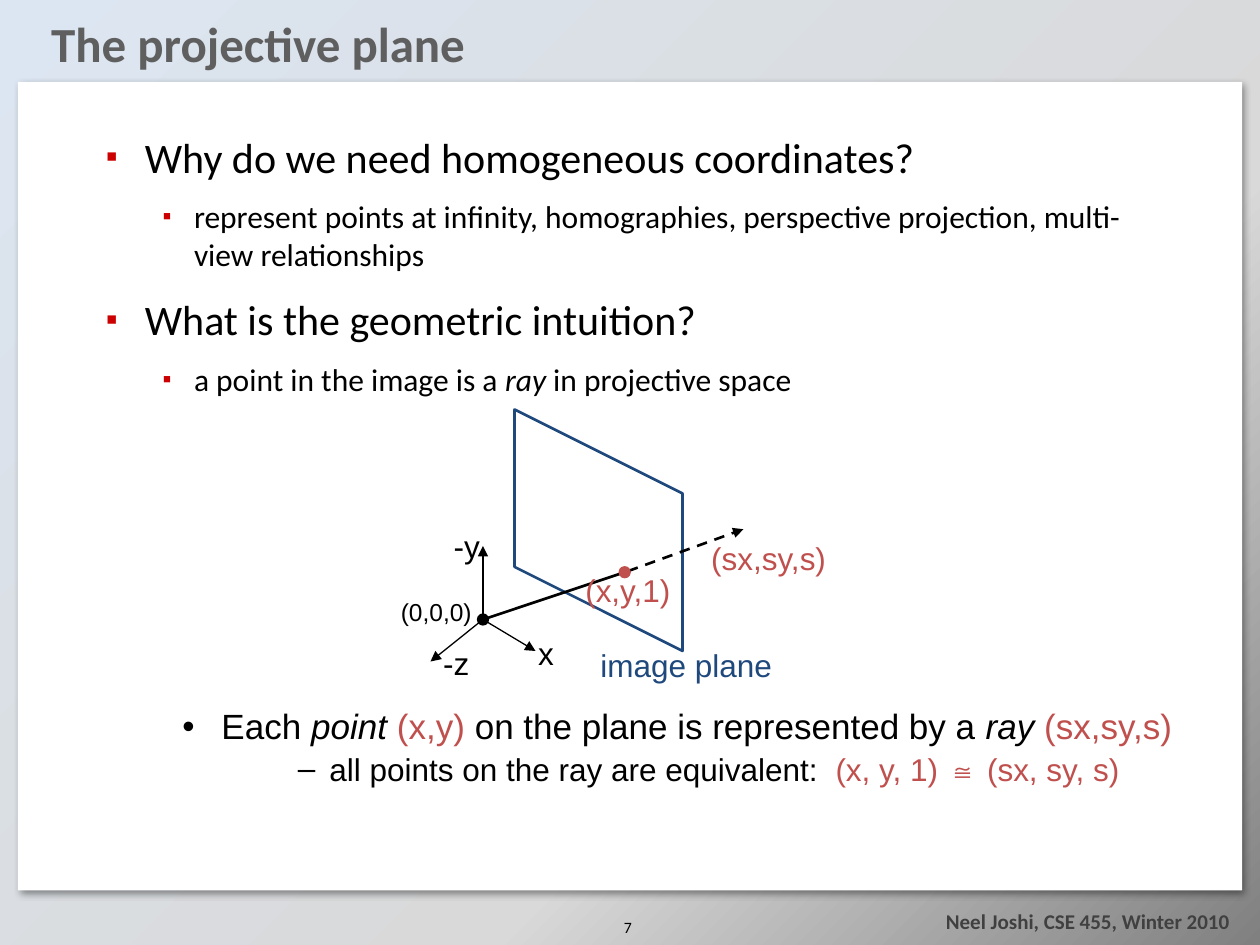
"""Build the projective plane slide on a grid of 120 columns by 90 rows."""
from typing import NamedTuple, Optional

import lxml.etree
import pptx
import pptx.dml.color
import pptx.enum.dml
import pptx.enum.shapes
import pptx.enum.text
import pptx.oxml
import pptx.oxml.ns
import pptx.util

RGB = pptx.dml.color.RGBColor
ALIGN = pptx.enum.text.PP_ALIGN
ANCHOR = pptx.enum.text.MSO_ANCHOR
SHAPE = pptx.enum.shapes.MSO_SHAPE
Pt = pptx.util.Pt

UNIT = pptx.util.Inches(10) // 120
BLACK = RGB(0, 0, 0)
WHITE = RGB(0xFF, 0xFF, 0xFF)
RED = RGB(0xC0, 0x50, 0x4D)
BLUE = RGB(0x1F, 0x49, 0x7D)
GREY = RGB(0x5F, 0x5F, 0x5F)
DARK = RGB(0x40, 0x40, 0x40)
MARK = RGB(0xCC, 0, 0)
SKY = RGB(0xDC, 0xE6, 0xF2)
SILVER = RGB(0xD9, 0xD9, 0xD9)
STEEL = RGB(0x80, 0x80, 0x80)


class Run(NamedTuple):
    text: str
    color: RGB = BLACK
    italic: bool = False
    bold: bool = False


class Bullet(NamedTuple):
    char: str
    left: float
    hang: float
    color: Optional[RGB] = None
    share: int = 100


class Para(NamedTuple):
    runs: list
    size: float
    font: str = "Arial"
    align: ALIGN = ALIGN.CENTER
    level: int = 0
    lines: float = 0.9
    before: float = 0
    bullet: Optional[Bullet] = None


class Box(NamedTuple):
    area: tuple
    paras: list
    anchor: ANCHOR = ANCHOR.TOP
    wrap: bool = True
    inset: tuple = (0.1, 0.05)


class Ray(NamedTuple):
    start: tuple
    end: tuple
    width: float = 0.75
    arrow: bool = True
    dash: bool = False


def grid(*cells: float) -> list:
    """Turn grid counts into lengths."""
    return [round(cell * UNIT) for cell in cells]


def node(parent, tag: str, **attrs):
    """Append a DrawingML child."""
    child = lxml.etree.SubElement(parent, pptx.oxml.ns.qn("a:" + tag))
    for key, value in attrs.items():
        child.set(key, str(value))
    return child


def add_mark(para, mark: Bullet) -> None:
    """Give a paragraph its bullet and hanging indent."""
    props = para._p.get_or_add_pPr()
    props.set("marL", str(pptx.util.Inches(mark.left)))
    props.set("indent", str(-pptx.util.Inches(mark.hang)))
    if mark.color is not None:
        node(node(props, "buClr"), "srgbClr", val=mark.color)
    node(props, "buSzPct", val=mark.share * 1000)
    node(props, "buFont", typeface="Arial")
    node(props, "buChar", char=mark.char)


def add_box(slide, box: Box) -> None:
    """Draw a text box with its paragraphs."""
    frame = slide.shapes.add_textbox(*grid(*box.area)).text_frame
    frame.word_wrap = box.wrap
    if not box.wrap:
        frame.auto_size = pptx.enum.text.MSO_AUTO_SIZE.SHAPE_TO_FIT_TEXT
    frame.vertical_anchor = box.anchor
    side, edge = map(pptx.util.Inches, box.inset)
    frame.margin_left = frame.margin_right = side
    frame.margin_top = frame.margin_bottom = edge
    for num, item in enumerate(box.paras):
        para = frame.add_paragraph() if num else frame.paragraphs[0]
        para.alignment, para.level = item.align, item.level
        para.line_spacing, para.space_before = item.lines, Pt(item.before)
        if item.bullet:
            add_mark(para, item.bullet)
        for piece in item.runs:
            run = para.add_run()
            run.text = piece.text
            font = run.font
            font.name, font.size = item.font, Pt(item.size)
            font.bold, font.italic = piece.bold, piece.italic
            font.color.rgb = piece.color


def add_ray(slide, ray: Ray) -> None:
    """Draw a straight line, with an arrowhead if asked."""
    kind = pptx.enum.shapes.MSO_CONNECTOR.STRAIGHT
    link = slide.shapes.add_connector(kind, *grid(*ray.start, *ray.end))
    link.line.color.rgb = BLACK
    link.line.width = Pt(ray.width)
    if ray.dash:
        link.line.dash_style = pptx.enum.dml.MSO_LINE.DASH
    if ray.arrow:
        node(link.line._get_or_add_ln(), "tailEnd", type="triangle")
    node(link._element.spPr, "effectLst")


def add_dot(slide, spot: tuple, color: RGB) -> None:
    """Draw a dot one cell wide around a spot."""
    dot = slide.shapes.add_shape(SHAPE.OVAL, *grid(spot[0] - 0.5, spot[1] - 0.5, 1, 1))
    dot.shadow.inherit = False
    dot.fill.solid()
    dot.fill.fore_color.rgb = dot.line.color.rgb = color
    dot.line.width = Pt(1)


def add_plane(slide, spots: list) -> None:
    """Draw the outlined image plane."""
    pen = slide.shapes.build_freeform(*spots[0], scale=float(UNIT))
    pen.add_line_segments(spots[1:], close=True)
    plane = pen.convert_to_shape()
    plane.shadow.inherit = False
    plane.fill.solid()
    plane.fill.fore_color.rgb = WHITE
    plane.line.color.rgb = BLUE
    plane.line.width = Pt(1.5)


def add_base(slide) -> None:
    """Draw the gradient background and the white panel."""
    slide.background.fill.gradient()
    grad = slide.background._cSld.bg.bgPr.find(pptx.oxml.ns.qn("a:gradFill"))
    for child in list(grad):
        grad.remove(child)
    stops = node(grad, "gsLst")
    for share, color in ((0, SKY), (65, SILVER), (100, STEEL)):
        node(node(stops, "gs", pos=share * 1000), "srgbClr", val=color)
    node(grad, "lin", ang=45 * 60000, scaled=0)
    panel = slide.shapes.add_shape(SHAPE.RECTANGLE, *grid(1.7, 7.8, 116.6, 77))
    panel.shadow.inherit = False
    panel.fill.solid()
    panel.fill.fore_color.rgb = WHITE
    panel.line.fill.background()
    effects = panel._element.spPr.find(pptx.oxml.ns.qn("a:effectLst"))
    shade = node(effects, "outerShdw", blurRad=Pt(4), dist=Pt(3),
                 dir=45 * 60000, algn="tl", rotWithShape=0)
    node(node(shade, "srgbClr", val=BLACK), "alpha", val=40000)


def label(area: tuple, text: str, color: RGB = BLACK, size: float = 18,
          anchor: ANCHOR = ANCHOR.MIDDLE) -> Box:
    """Make a one-line label of the diagram."""
    return Box(area, [Para([Run(text, color)], size)], anchor, False, (0, 0.05))


def point(deep: bool, *runs: Run) -> Para:
    """Make a body paragraph of the outer or inner level."""
    size, left, hang = (18, 0.7, 0.25) if deep else (24, 0.31, 0.31)
    return Para(list(runs), size, "Calibri", ALIGN.LEFT, int(deep), 1, size / 2,
                Bullet("▪", left, hang, MARK, 80))


ZERO, HIT = (46, 59), (59.5, 54.5)
PLANE = [(49, 39), (49, 54), (65, 62), (65, 47)]
RAYS = [Ray(ZERO, (46, 52)), Ray(ZERO, (51, 62)), Ray(ZERO, (41, 63)),
        Ray(ZERO, HIT, 1.5, False), Ray((59.8, 54.4), (70.8, 50.4), 1.5, True, True)]
BOXES = [
    Box((84, 85.9, 34.3, 3.7), [Para([Run("Neel Joshi, CSE 455, Winter 2010", DARK, bold=True)],
                                     12, "Calibri", ALIGN.RIGHT, lines=1)]),
    Box((56.9, 87.4, 5.8, 2.4), [Para([Run("7")], 9, "Calibri", lines=1)], ANCHOR.BOTTOM),
    Box((3.7, 1.9, 112.4, 5.3), [Para([Run("The projective plane", GREY, bold=True)],
                                      28, "Calibri", ALIGN.LEFT, lines=0.85)], ANCHOR.MIDDLE),
    Box((9, 12, 102, 30.8), [
        point(False, Run("Why do we need homogeneous coordinates?")),
        point(True, Run("represent points at infinity, homographies, perspective projection, "
                        "multi-view relationships")),
        point(False, Run("What is the geometric intuition?")),
        point(True, Run("a point in the image is a "), Run("ray", italic=True),
              Run(" in projective space")),
    ], inset=(0.09, 0.04)),
    Box((9, 67, 105, 11), [
        Para([Run("Each "), Run("point ", italic=True), Run("(x,y)", RED),
              Run(" on the plane is represented by a "), Run("ray ", italic=True),
              Run("(sx,sy,s)", RED)], 20, level=1, before=4, bullet=Bullet("•", 0.81, 0.31)),
        Para([Run("all points on the ray are equivalent:  "), Run("(x, y, 1) ≅ (sx, sy, s)", RED)],
             18, level=2, before=3.6, bullet=Bullet("–", 1.25, 0.25)),
    ]),
    label((37, 56.4, 9.1, 4), "(0,0,0)", size=14),
    label((66.4, 51, 13.6, 4.8), "(sx,sy,s)", RED),
    label((56, 61.2, 18.7, 4.8), "image plane", BLUE),
    label((54.4, 54, 10.8, 4.8), "(x,y,1)", RED),
    label((42, 50, 4.9, 4.8), "-y", anchor=ANCHOR.TOP),
    label((50, 60.2, 4, 4.8), "x", anchor=ANCHOR.TOP),
    label((41, 61.2, 4.9, 4.8), "-z", anchor=ANCHOR.TOP),
]


def main() -> None:
    """Build and save the slide."""
    deck = pptx.Presentation()
    deck.slide_width, deck.slide_height = grid(120, 90)
    slide = deck.slides.add_slide(deck.slide_layouts[6])
    add_base(slide)
    add_plane(slide, PLANE)
    for ray in RAYS:
        add_ray(slide, ray)
    add_dot(slide, ZERO, BLACK)
    add_dot(slide, HIT, RED)
    for box in BOXES:
        add_box(slide, box)
    deck.save("out.pptx")


if __name__ == "__main__":
    main()
